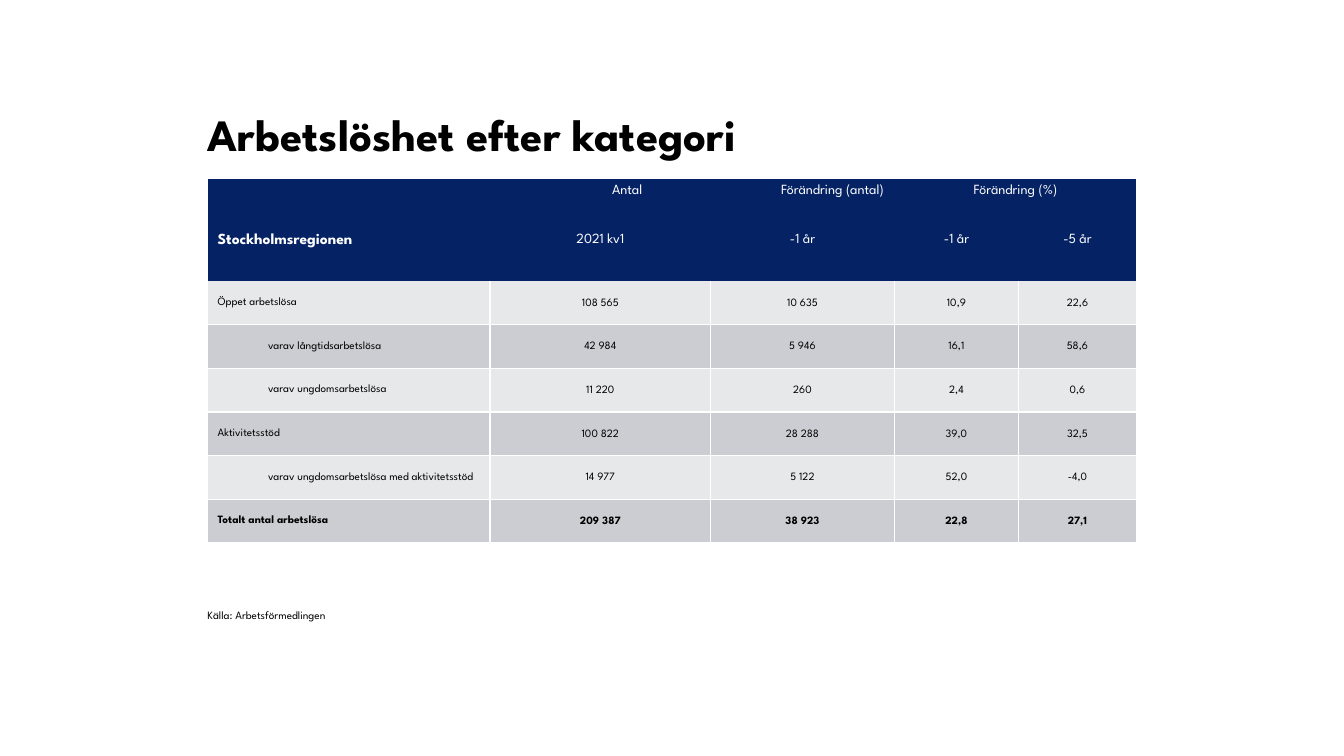
import pptx
import pptx.util
import pptx.dml.color
import pptx.enum.text
import pptx.oxml.ns
import lxml.etree

Cm = pptx.util.Cm
ALIGN = pptx.enum.text.PP_ALIGN
ANCHOR = pptx.enum.text.MSO_ANCHOR
RGBColor = pptx.dml.color.RGBColor
qn = pptx.oxml.ns.qn

NAVY = RGBColor(0x05, 0x23, 0x64)
LIGHT = RGBColor(0xE7, 0xE8, 0xEA)
GREY = RGBColor(0xCC, 0xCD, 0xD3)
WHITE = RGBColor(0xFF, 0xFF, 0xFF)
BLACK = RGBColor(0, 0, 0)
FONT = "League Spartan"
NO_STYLE = "{2D5ABB26-0587-4C30-8999-92F81FD0307C}"

COLUMN_WIDTHS = [7.12, 5.56, 4.63, 3.13, 2.97]
ROW_HEIGHTS = [1.24, 1.32] + [1.1] * 6
HEADINGS = ["Stockholmsregionen", "2021 kv1", "-1 år", "-1 år", "-5 år"]
CATEGORIES = [
    ["Öppet arbetslösa", "108 565", "10 635", "10,9", "22,6"],
    ["varav långtidsarbetslösa", "42 984", "5 946", "16,1", "58,6"],
    ["varav ungdomsarbetslösa", "11 220", "260", "2,4", "0,6"],
    ["Aktivitetsstöd", "100 822", "28 288", "39,0", "32,5"],
    ["varav ungdomsarbetslösa med aktivitetsstöd", "14 977", "5 122", "52,0", "-4,0"],
    ["Totalt antal arbetslösa", "209 387", "38 923", "22,8", "27,1"],
]


def write(frame, text, size, color, bold=False, align=ALIGN.LEFT):
    frame.text = text
    para = frame.paragraphs[0]
    para.alignment = align
    for span in para.runs:
        span.font.name = FONT
        span.font.size = pptx.util.Pt(size)
        span.font.bold = bold
        span.font.color.rgb = color
    return para


def add_text(page, place, text, size, bold=False, inset=None, anchor=ANCHOR.TOP, wrap=True):
    box = page.shapes.add_textbox(*[Cm(length) for length in place])
    frame = box.text_frame
    frame.word_wrap = wrap
    frame.vertical_anchor = anchor
    if inset is not None:
        frame.margin_left = frame.margin_right = Cm(inset)
        frame.margin_top = frame.margin_bottom = Cm(inset)
    write(frame, text, size, BLACK, bold)


def fill_cell(cell, color):
    cell.fill.solid()
    cell.fill.fore_color.rgb = color


def add_borders(cell, sides):
    properties = cell._tc.get_or_add_tcPr()
    for side in sides:
        line = lxml.etree.SubElement(properties, qn(f"a:ln{side}"), w="12700")
        solid = lxml.etree.SubElement(line, qn("a:solidFill"))
        lxml.etree.SubElement(solid, qn("a:srgbClr"), val=str(WHITE))


def add_tab_stops(para, stops):
    tab_list = lxml.etree.SubElement(para._p.get_or_add_pPr(), qn("a:tabLst"))
    for stop in stops:
        lxml.etree.SubElement(tab_list, qn("a:tab"), pos=str(Cm(stop)), algn="l")


def fill_header(table):
    for row in range(2):
        for column in range(len(HEADINGS)):
            fill_cell(table.cell(row, column), NAVY)
    for column in (1, 3):
        table.cell(0, column).merge(table.cell(0, column + 1))
    counts = write(table.cell(0, 1).text_frame, "\tAntal\tFörändring (antal)", 10, WHITE)
    add_tab_stops(counts, [2.82, 7.08])
    write(table.cell(0, 3).text_frame, "Förändring (%)", 10, WHITE, align=ALIGN.CENTER)
    write(table.cell(1, 0).text_frame, HEADINGS[0], 11, WHITE, bold=True)
    for column, heading in enumerate(HEADINGS[1:], 1):
        write(table.cell(1, column).text_frame, heading, 10, WHITE, align=ALIGN.CENTER)


def fill_body(table):
    for index, category in enumerate(CATEGORIES):
        total = index == len(CATEGORIES) - 1
        for column, text in enumerate(category):
            cell = table.cell(index + 2, column)
            cell.vertical_anchor = ANCHOR.MIDDLE
            align = ALIGN.CENTER if column else ALIGN.LEFT
            para = write(cell.text_frame, text, 8, BLACK, total, align)
            if column:
                cell.margin_left = cell.margin_right = cell.margin_top = Cm(0.03)
                cell.margin_bottom = 0
            elif text.startswith("varav"):
                para.level = 1
                para._p.get_or_add_pPr().set("marL", str(Cm(1.27)))
            add_borders(cell, ("L" if column else "") + "R" + ("T" if index else "") + "B")
            fill_cell(cell, GREY if index % 2 else LIGHT)


def add_category_table(page):
    frame = page.shapes.add_table(
        len(ROW_HEIGHTS), len(COLUMN_WIDTHS), Cm(5.23), Cm(4.52),
        Cm(sum(COLUMN_WIDTHS)), Cm(sum(ROW_HEIGHTS)))
    table = frame.table
    table._tbl.tblPr.find(qn("a:tableStyleId")).text = NO_STYLE
    table.horz_banding = False
    for column, width in zip(table.columns, COLUMN_WIDTHS):
        column.width = Cm(width)
    for row, height in zip(table.rows, ROW_HEIGHTS):
        row.height = Cm(height)
    fill_header(table)
    fill_body(table)


def main():
    deck = pptx.Presentation()
    deck.slide_width, deck.slide_height = Cm(33.87), Cm(19.05)
    page = deck.slides.add_slide(deck.slide_layouts[6])
    add_text(page, (5.23, 0.94, 23.42, 3.1), "Arbetslöshet efter kategori", 32,
             bold=True, inset=0, anchor=ANCHOR.BOTTOM)
    add_category_table(page)
    add_text(page, (4.98, 15.21, 4.17, 0.61), "Källa: Arbetsförmedlingen", 8, wrap=False)
    deck.save("out.pptx")


if __name__ == "__main__":
    main()
